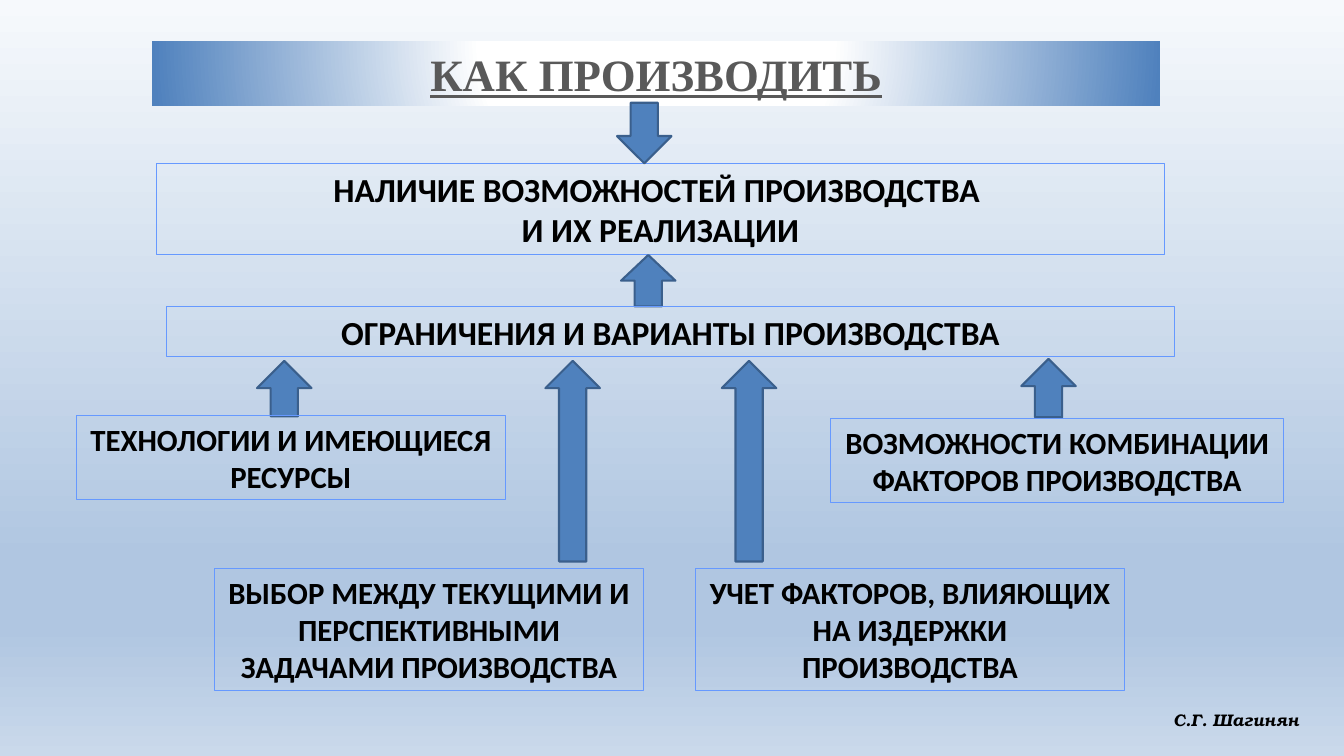
from dataclasses import dataclass

from lxml.etree import SubElement
from pptx import Presentation
from pptx.dml.color import RGBColor
from pptx.enum.shapes import MSO_SHAPE
from pptx.enum.text import MSO_ANCHOR, MSO_AUTO_SIZE, PP_ALIGN
from pptx.oxml.ns import qn
from pptx.util import Inches, Pt


@dataclass(frozen=True)
class Theme:
    """Colours, fonts and type sizes of the slide."""
    blue: str = "4F81BD"
    arrow_edge: str = "3A5F8C"
    box_edge: str = "6699FF"
    heading: str = "595959"
    ink: str = "000000"
    white: str = "FFFFFF"
    sky: tuple = ((0, "F6F9FC"), (74, "B0C6E1"), (83, "B0C6E1"), (100, "CAD9EB"))
    heading_font: str = "Times New Roman"
    body_font: str = "Calibri"
    author_font: str = "TeX Gyre Bonum"
    heading_size: int = 32
    main_size: int = 24
    factor_size: int = 22
    author_size: int = 12


THEME = Theme()
ARROW_WIDTH = 0.54
FACTOR_ARROW_TOP = 3.58


def colour(code):
    """Turn a hex code into a colour."""
    return RGBColor.from_string(code)


def place(shape, box):
    """Move a shape to a box of left, top, width and height in inches."""
    shape.left, shape.top, shape.width, shape.height = map(Inches, box)


def add_gradient(owner, stops):
    """Swap the solid fill of an owner for a gradient and return it."""
    solid = owner.element.xpath(".//p:bgPr/a:solidFill | .//p:spPr/a:solidFill")[0]
    gradient = solid.makeelement(qn("a:gradFill"), {"rotWithShape": "1"})
    stop_list = SubElement(gradient, qn("a:gsLst"))
    for position, code in stops:
        stop = SubElement(stop_list, qn("a:gs"), pos=str(position * 1000))
        SubElement(stop, qn("a:srgbClr"), val=code)
    solid.getparent().replace(solid, gradient)
    return gradient


def write(shape, text, size, font, code, align=PP_ALIGN.CENTER, italic=None, underline=None):
    """Fill a shape with bold text, one paragraph a line."""
    frame = shape.text_frame
    frame.text = text
    frame.vertical_anchor = MSO_ANCHOR.MIDDLE
    for para in frame.paragraphs:
        para.alignment = align
        for span in para.runs:
            span.font.size = Pt(size)
            span.font.name = font
            span.font.bold = True
            span.font.italic = italic
            span.font.underline = underline
            span.font.color.rgb = colour(code)


def paint_background(page):
    """Paint the vertical sky gradient behind the page."""
    page.background.fill.solid()
    gradient = add_gradient(page, THEME.sky)
    SubElement(gradient, qn("a:lin"), ang="5400000", scaled="0")


def add_heading(page, box):
    """Set the title on its band that glows white in the middle."""
    title = page.shapes.title
    place(title, box)
    title.fill.solid()
    stops = ((0, THEME.white), (35, THEME.white), (100, THEME.blue))
    gradient = add_gradient(title, stops)
    glow = SubElement(gradient, qn("a:path"), path="circle")
    SubElement(glow, qn("a:fillToRect"), l="50000", t="-80000", r="50000", b="180000")
    write(title, "КАК ПРОИЗВОДИТЬ", THEME.heading_size, THEME.heading_font,
          THEME.heading, underline=True)
    title.text_frame.auto_size = MSO_AUTO_SIZE.NONE


def add_box(page, box, text, size):
    """Add an outlined statement box."""
    statement = page.shapes.add_shape(MSO_SHAPE.RECTANGLE, *map(Inches, box))
    statement.shadow.inherit = False
    statement.fill.background()
    statement.line.color.rgb = colour(THEME.box_edge)
    statement.line.width = Pt(0.75)
    write(statement, text, size, THEME.body_font, THEME.ink)
    statement.text_frame.word_wrap = True


def add_arrow(page, left, top, height, kind=MSO_SHAPE.UP_ARROW):
    """Add a vertical block arrow."""
    box = (left, top, ARROW_WIDTH, height)
    arrow = page.shapes.add_shape(kind, *map(Inches, box))
    arrow.shadow.inherit = False
    arrow.fill.solid()
    arrow.fill.fore_color.rgb = colour(THEME.blue)
    arrow.line.color.rgb = colour(THEME.arrow_edge)
    arrow.line.width = Pt(1.5)


def add_main_chain(page):
    """Add the two wide statements and the arrows that meet at the first."""
    add_box(page, (1.55, 1.62, 10, 0.91),
            "НАЛИЧИЕ ВОЗМОЖНОСТЕЙ ПРОИЗВОДСТВА \nИ ИХ РЕАЛИЗАЦИИ", THEME.main_size)
    add_arrow(page, 6.12, 1.02, 0.6, MSO_SHAPE.DOWN_ARROW)
    add_arrow(page, 6.16, 2.53, 0.51)
    add_box(page, (1.65, 3.04, 10, 0.5),
            "ОГРАНИЧЕНИЯ И ВАРИАНТЫ ПРОИЗВОДСТВА", THEME.main_size)


def add_factors(page):
    """Add the four factors, each with its arrow up to the constraints."""
    factors = (
        ((0.76, 4.12, 4.25, 0.84), (2.55, FACTOR_ARROW_TOP, 0.55),
         "ТЕХНОЛОГИИ И ИМЕЮЩИЕСЯ РЕСУРСЫ"),
        ((8.24, 4.15, 4.49, 0.84), (10.13, 3.56, 0.58),
         "ВОЗМОЖНОСТИ КОМБИНАЦИИ ФАКТОРОВ ПРОИЗВОДСТВА"),
        ((2.13, 5.64, 4.25, 1.21), (5.41, FACTOR_ARROW_TOP, 1.99),
         "ВЫБОР МЕЖДУ ТЕКУЩИМИ И ПЕРСПЕКТИВНЫМИ ЗАДАЧАМИ ПРОИЗВОДСТВА"),
        ((6.9, 5.64, 4.25, 1.21), (7.16, FACTOR_ARROW_TOP, 1.99),
         "УЧЕТ ФАКТОРОВ, ВЛИЯЮЩИХ НА ИЗДЕРЖКИ ПРОИЗВОДСТВА"),
    )
    for box, arrow, text in factors:
        add_arrow(page, *arrow)
        add_box(page, box, text, THEME.factor_size)


def add_author(page, box):
    """Add the author's name in the corner."""
    author = page.shapes.add_textbox(*map(Inches, box))
    write(author, "С.Г. Шагинян", THEME.author_size, THEME.author_font,
          THEME.ink, PP_ALIGN.LEFT, italic=True)
    author.text_frame.word_wrap = False


def main():
    """Build the slide and save the deck."""
    deck = Presentation()
    deck.slide_width, deck.slide_height = Inches(13.33), Inches(7.5)
    page = deck.slides.add_slide(deck.slide_layouts[5])
    paint_background(page)
    add_heading(page, (1.51, 0.41, 10, 0.64))
    add_main_chain(page)
    add_factors(page)
    add_author(page, (11.54, 6.99, 1.45, 0.3))
    deck.save("out.pptx")


if __name__ == "__main__":
    main()
